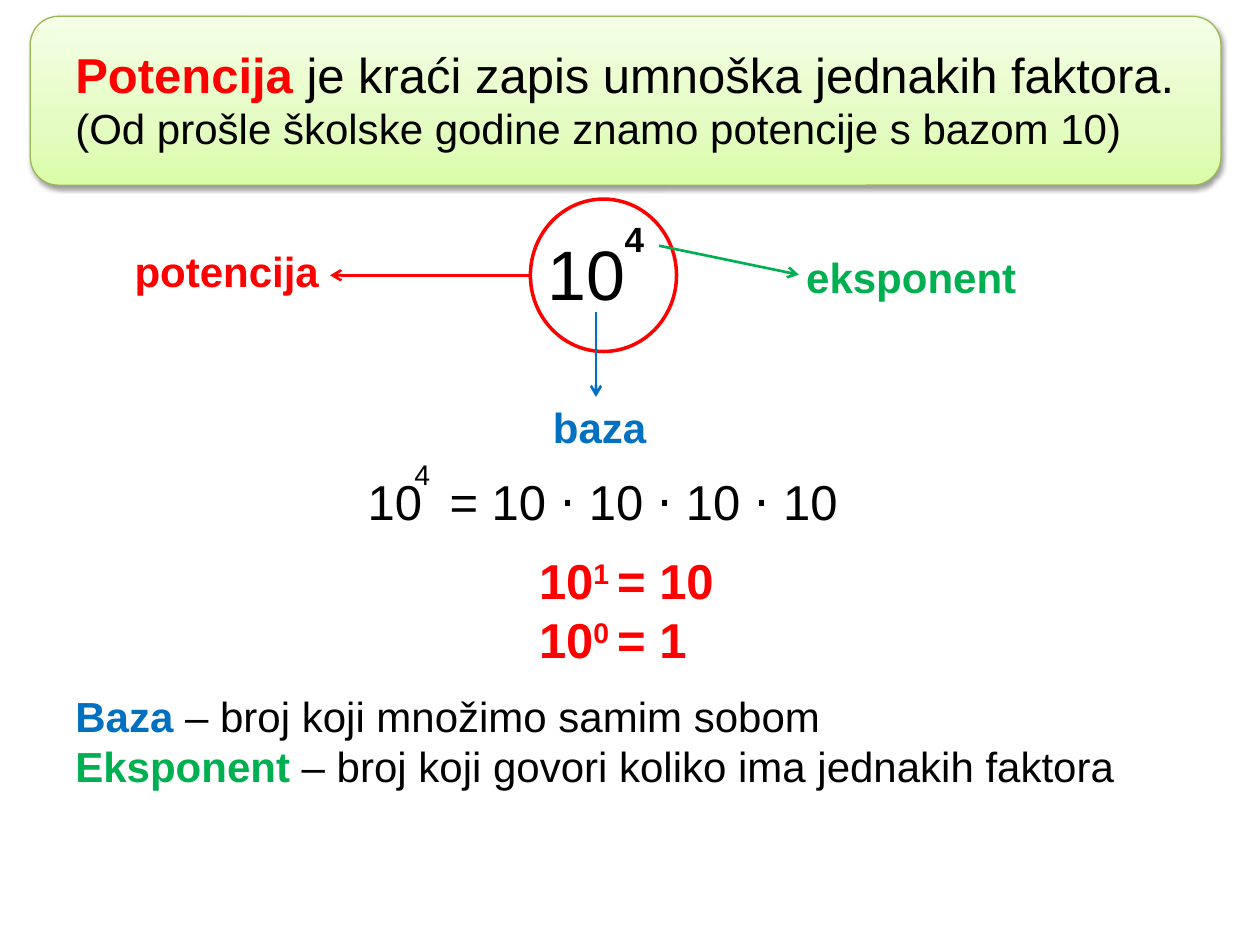
from copy import deepcopy

from lxml.etree import SubElement
from pptx import Presentation
from pptx.dml.color import RGBColor
from pptx.enum.shapes import MSO_CONNECTOR, MSO_SHAPE
from pptx.enum.text import MSO_AUTO_SIZE
from pptx.oxml.ns import qn
from pptx.util import Inches, Pt

BLACK = RGBColor(0x00, 0x00, 0x00)
RED = RGBColor(0xFF, 0x00, 0x00)
BLUE = RGBColor(0x00, 0x70, 0xC0)
GREEN = RGBColor(0x00, 0xB0, 0x50)
PANEL_LINE = RGBColor(0x98, 0xB9, 0x55)
PANEL_STOPS = [
    (0, RGBColor(0xDA, 0xFD, 0xA7)),
    (0.35, RGBColor(0xE4, 0xFC, 0xC2)),
    (1, RGBColor(0xF5, 0xFF, 0xE7)),
]

FONT = "Arial"
MARGIN = 0.5
PANEL = (0.24, 0.13, 9.45, 1.34)
CIRCLE = (4.21, 1.58, 1.16, 1.21)
EQUALS_TAB = 0.65

# A span is (text, colour, bold, superscript); a paragraph is (size, spans).
DEFINITION = [
    (28, [("Potencija", RED, True, False),
          (" je kraći zapis umnoška jednakih faktora.", BLACK, False, False)]),
    (24, [("(Od prošle školske godine znamo potencije s bazom 10)", BLACK, False, False)]),
]
SPECIAL_POWERS = [
    (28, [("10", RED, True, False), (exponent + " ", RED, True, True),
          ("= " + value, RED, True, False)])
    for exponent, value in [("1", "10"), ("0", "1")]
]
MEANINGS = [
    (24, [("Baza ", BLUE, True, False),
          ("– broj koji množimo samim sobom", BLACK, False, False)]),
    (24, [("Eksponent", GREEN, True, False),
          (" – broj koji govori koliko ima jednakih faktora", BLACK, False, False)]),
]


def single(text, size, color=BLACK, bold=False, superscript=False):
    """One paragraph holding one span."""
    return [(size, [(text, color, bold, superscript)])]


# (left, top, width, height), wraps, paragraphs
TEXTS = [
    ((MARGIN, 0.3, 10.65, 0.98), True, DEFINITION),
    ((2.82, 3.69, 5.96, 0.57), True, single("10\t= 10 ⋅ 10 ⋅ 10 ⋅ 10", 28)),
    ((4.25, 1.78, 0.93, 0.77), True, single("10", 40)),
    ((4.86, 1.68, 0.58, 0.44), True, single("4", 20, bold=True)),
    ((4.18, 4.32, 1.63, 1.04), False, SPECIAL_POWERS),
    ((3.19, 3.53, 0.35, 0.57), False, single("4", 28, superscript=True)),
    ((MARGIN, 5.43, 8.75, 0.91), True, MEANINGS),
    ((0.97, 1.9, 2.07, 0.5), True, single("potencija", 24, RED, True)),
    ((4.29, 3.14, 0.96, 0.5), True, single("baza", 24, BLUE, True)),
    ((6.3, 1.95, 3.39, 0.5), True, single("eksponent", 24, GREEN, True)),
]

CIRCLE_MIDDLE = CIRCLE[1] + CIRCLE[3] / 2
ARROWS = [
    ((4.73, 2.48), (4.73, 3.15), BLUE),
    ((CIRCLE[0], CIRCLE_MIDDLE), (2.62, CIRCLE_MIDDLE), RED),
    ((5.23, 1.95), (6.34, 2.18), GREEN),
]


def inches(values):
    return [Inches(value) for value in values]


def add_panel(page):
    panel = page.shapes.add_shape(MSO_SHAPE.ROUNDED_RECTANGLE, *inches(PANEL))
    panel.fill.gradient()
    panel.fill.gradient_angle = 90
    first = panel._element.spPr.find(".//" + qn("a:gs"))
    first.addnext(deepcopy(first))
    for stop, (position, color) in zip(panel.fill.gradient_stops, PANEL_STOPS):
        stop.position = position
        stop.color.rgb = color
    panel.line.color.rgb = PANEL_LINE
    panel.line.width = Pt(0.75)
    panel.shadow.inherit = False
    effects = panel._element.spPr.find(qn("a:effectLst"))
    shadow = SubElement(effects, qn("a:outerShdw"), blurRad=str(Pt(3.1)),
                        dist=str(Pt(1.6)), dir="5400000", rotWithShape="0")
    tint = SubElement(shadow, qn("a:srgbClr"), val=str(BLACK))
    SubElement(tint, qn("a:alpha"), val="38000")


def add_text(page, place, wraps, paragraphs):
    box = page.shapes.add_textbox(*inches(place))
    frame = box.text_frame
    frame.word_wrap = wraps
    frame.auto_size = MSO_AUTO_SIZE.SHAPE_TO_FIT_TEXT
    for index, (size, spans) in enumerate(paragraphs):
        para = frame.add_paragraph() if index else frame.paragraphs[0]
        para.font.size = Pt(size)
        para.font.name = FONT
        for text, color, bold, superscript in spans:
            span = para.add_run()
            span.text = text
            span.font.color.rgb = color
            span.font.bold = bold
            if superscript:
                span._r.get_or_add_rPr().set("baseline", "30000")
            if "\t" in text:
                set_tab(para)


def set_tab(para):
    properties = para._p.get_or_add_pPr()
    tabs = properties.makeelement(qn("a:tabLst"))
    SubElement(tabs, qn("a:tab"), pos=str(Inches(EQUALS_TAB)), algn="l")
    properties.find(qn("a:defRPr")).addprevious(tabs)


def add_circle(page):
    circle = page.shapes.add_shape(MSO_SHAPE.OVAL, *inches(CIRCLE))
    circle.fill.background()
    circle.line.color.rgb = RED
    circle.line.width = Pt(2)
    circle.shadow.inherit = False


def add_arrow(page, start, end, color):
    arrow = page.shapes.add_connector(MSO_CONNECTOR.STRAIGHT, *inches(start + end))
    arrow.line.color.rgb = color
    arrow.line.width = Pt(1.5)
    SubElement(arrow.line._get_or_add_ln(), qn("a:tailEnd"), type="arrow")
    SubElement(arrow._element.spPr, qn("a:effectLst"))


def main():
    deck = Presentation()
    deck.slide_width, deck.slide_height = Inches(10), Inches(7.5)
    page = deck.slides.add_slide(deck.slide_layouts[6])
    add_panel(page)
    for text in TEXTS:
        add_text(page, *text)
    add_circle(page)
    for arrow in ARROWS:
        add_arrow(page, *arrow)
    deck.save("out.pptx")


if __name__ == "__main__":
    main()
